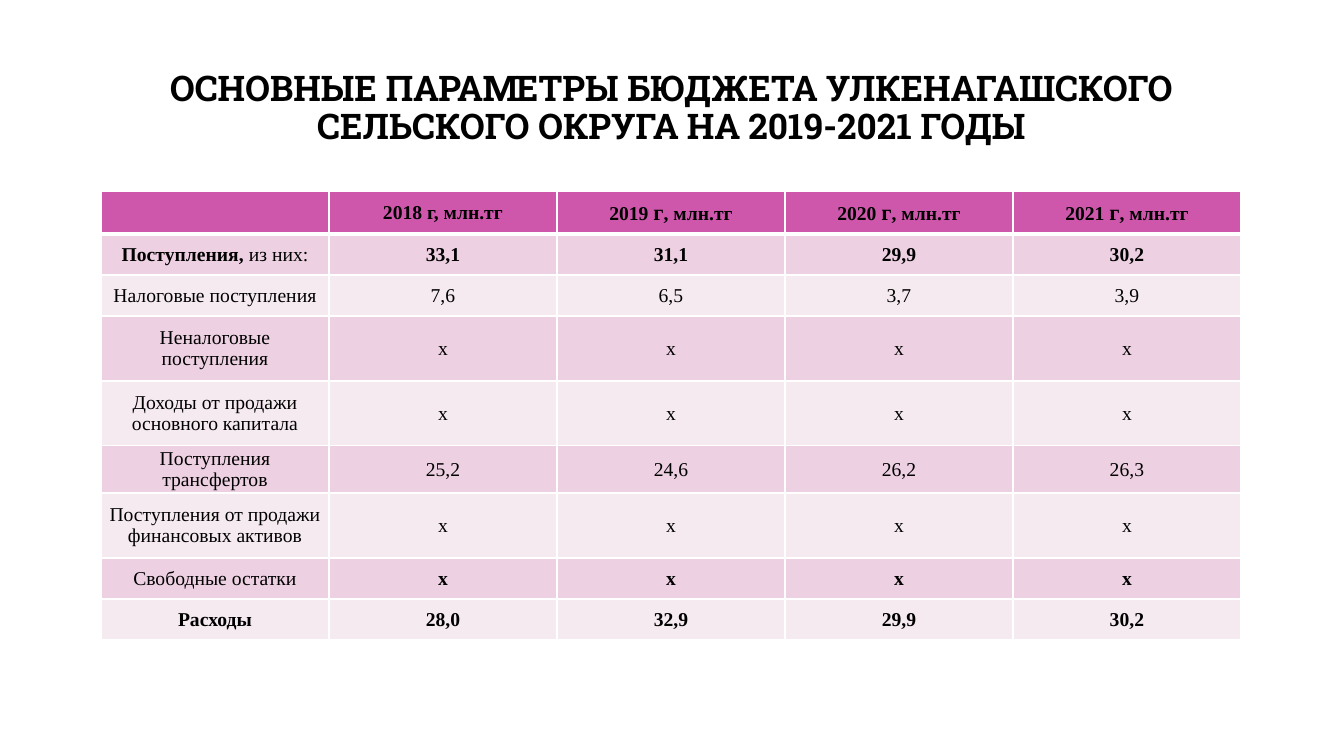
"""Build a slide with the main budget figures of a rural district."""
import dataclasses
import typing

import lxml.etree
import pptx
import pptx.dml.color
import pptx.enum.text
import pptx.oxml.ns
import pptx.table
import pptx.text.text
import pptx.util

SCALE = 914400 / 100.8
LEFT, WIDTH, COL = 101, 1141, 228
HEAD = 43


class Part(typing.NamedTuple):
    text: str
    bold: bool = False
    size: float = 14


@dataclasses.dataclass(frozen=True)
class Theme:
    ink: str = "000000"
    line: str = "FFFFFF"
    head: str = "CE57AB"
    bands: tuple[str, str] = ("EDD1E2", "F6EAF1")
    title: float = 25.2
    large: float = 16
    title_font: str = "Roboto Slab"
    body_font: str = "Times New Roman"
    thin: int = 1
    thick: int = 3


@dataclasses.dataclass(frozen=True)
class Row:
    label: list[Part]
    values: str
    height: int = 41
    bold: bool = False


THEME = Theme()
YEARS = (2018, 2019, 2020, 2021)
ROWS = [
    Row([Part("Поступления, ", True), Part("из них:")], "33,1 31,1 29,9 30,2", bold=True),
    Row([Part("Налоговые поступления")], "7,6 6,5 3,7 3,9"),
    Row([Part("Неналоговые поступления")], "х х х х", 65),
    Row([Part("Доходы от продажи основного капитала")], "х х х х", 65),
    Row([Part("Поступления трансфертов")], "25,2 24,6 26,2 26,3", 43),
    Row([Part("Поступления от продажи финансовых активов")], "х х х х", 65),
    Row([Part("Свободные остатки")], "х х х х", bold=True),
    Row([Part("Расходы", True)], "28,0 32,9 29,9 30,2", bold=True),
]


def px(count: int) -> pptx.util.Emu:
    """Turn pixels into EMU."""
    return pptx.util.Emu(round(count * SCALE))


def write(para: pptx.text.text._Paragraph, parts: list[Part], face: str) -> None:
    """Write centred runs into a paragraph."""
    para.alignment = pptx.enum.text.PP_ALIGN.CENTER
    for part in parts:
        run = para.add_run()
        run.text = part.text
        run.font.name = face
        run.font.size = pptx.util.Pt(part.size)
        run.font.bold = part.bold
        run.font.color.rgb = pptx.dml.color.RGBColor.from_string(THEME.ink)


def edge(cell: pptx.table._Cell, top: int, bottom: int) -> None:
    """Draw the four borders of a cell."""
    props = cell._tc.get_or_add_tcPr()
    qn = pptx.oxml.ns.qn
    sides = {"lnL": THEME.thin, "lnR": THEME.thin, "lnT": top, "lnB": bottom}
    for place, (side, width) in enumerate(sides.items()):
        line = lxml.etree.Element(qn(f"a:{side}"), w=str(pptx.util.Pt(width)))
        fill = lxml.etree.SubElement(line, qn("a:solidFill"))
        lxml.etree.SubElement(fill, qn("a:srgbClr"), val=THEME.line)
        props.insert(place, line)


def paint(cell: pptx.table._Cell, parts: list[Part], row: int) -> None:
    """Fill, frame and write one cell."""
    shade = THEME.bands[(row - 1) % 2] if row else THEME.head
    cell.fill.solid()
    cell.fill.fore_color.rgb = pptx.dml.color.RGBColor.from_string(shade)
    cell.vertical_anchor = pptx.enum.text.MSO_ANCHOR.MIDDLE
    cell.margin_left = cell.margin_right = px(7)
    cell.margin_top = cell.margin_bottom = 0
    edge(cell, THEME.thick if row == 1 else THEME.thin, THEME.thin if row else THEME.thick)
    write(cell.text_frame.paragraphs[0], parts, THEME.body_font)


def header(year: int) -> list[Part]:
    """Give the heading of a year column."""
    if year == YEARS[0]:
        return [Part(f"{year} г, млн.тг", True)]
    return [Part(f"{year} ", True), Part("г", True, THEME.large), Part(", млн.тг", True)]


def main() -> None:
    """Build and save the slide."""
    deck = pptx.Presentation()
    deck.slide_width, deck.slide_height = px(1344), px(756)
    slide = deck.slides.add_slide(deck.slide_layouts[6])

    frame = slide.shapes.add_textbox(px(LEFT), px(49), px(WIDTH), px(120)).text_frame
    frame.word_wrap = True
    frame.vertical_anchor = pptx.enum.text.MSO_ANCHOR.MIDDLE
    title = "ОСНОВНЫЕ ПАРАМЕТРЫ БЮДЖЕТА УЛКЕНАГАШСКОГО СЕЛЬСКОГО ОКРУГА НА 2019-2021 ГОДЫ"
    frame.paragraphs[0].line_spacing = 0.9
    write(frame.paragraphs[0], [Part(title, True, THEME.title)], THEME.title_font)

    grid: list[list[list[Part]]] = [[[], *map(header, YEARS)]]
    grid += [[row.label, *([Part(text, row.bold)] for text in row.values.split())] for row in ROWS]
    tall = [HEAD, *(row.height for row in ROWS)]
    shape = slide.shapes.add_table(len(grid), len(grid[0]), px(LEFT), px(191), px(WIDTH), px(sum(tall)))
    table = shape.table
    for column in table.columns:
        column.width = px(COL)
    for index, (height, cells) in enumerate(zip(tall, grid)):
        table.rows[index].height = px(height)
        for place, parts in enumerate(cells):
            paint(table.cell(index, place), parts, index)
    deck.save("out.pptx")


if __name__ == "__main__":
    main()
